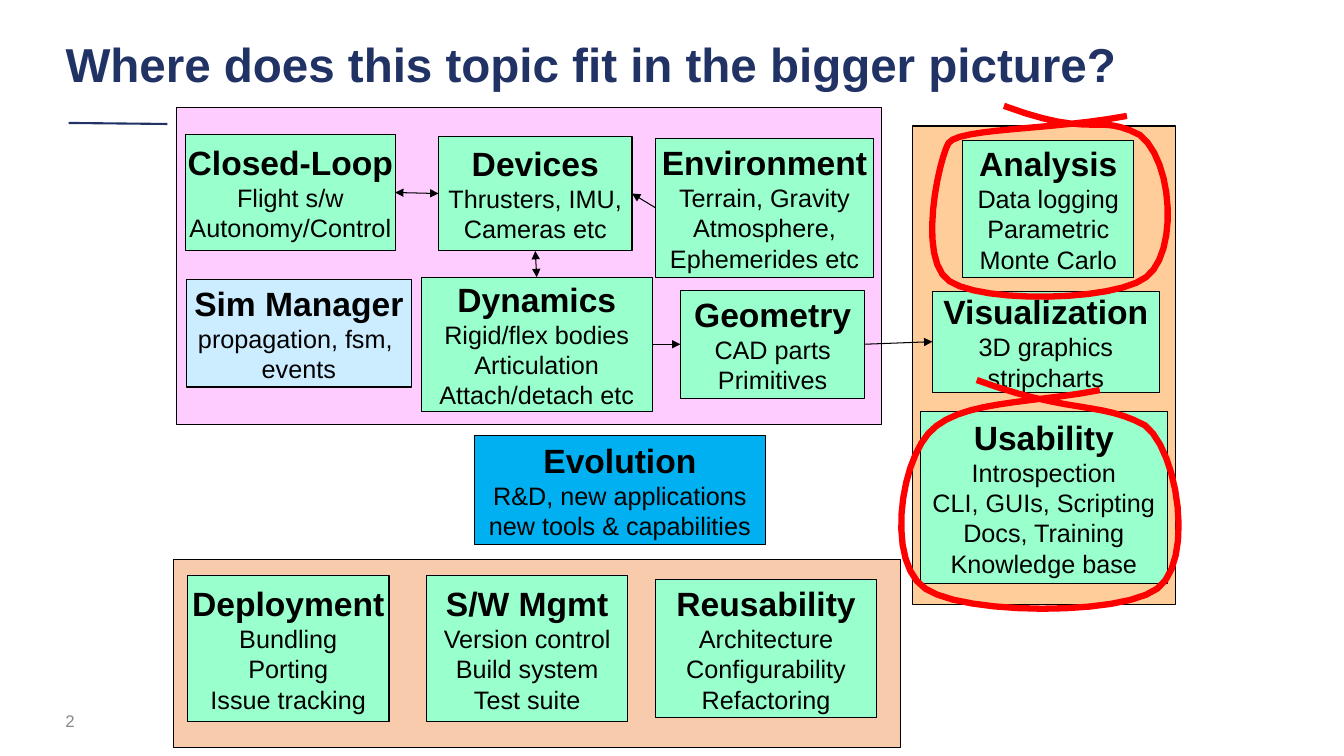
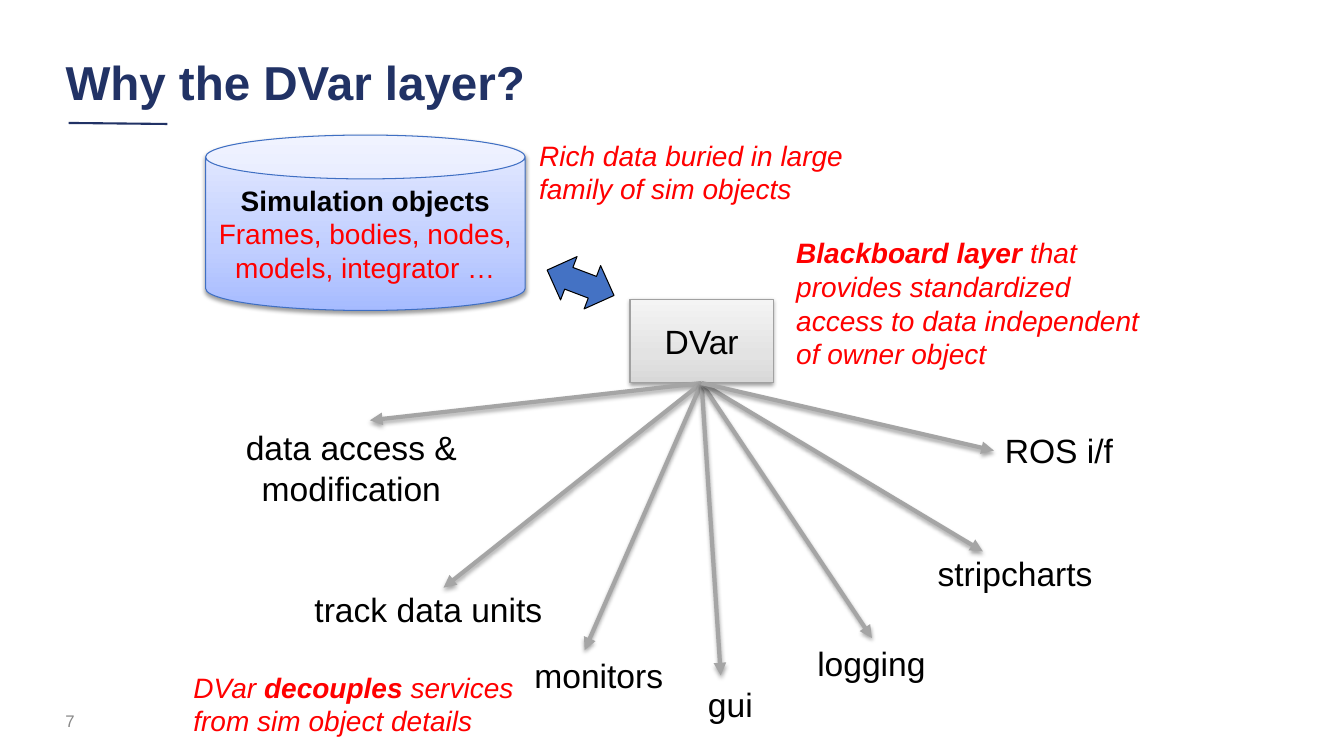
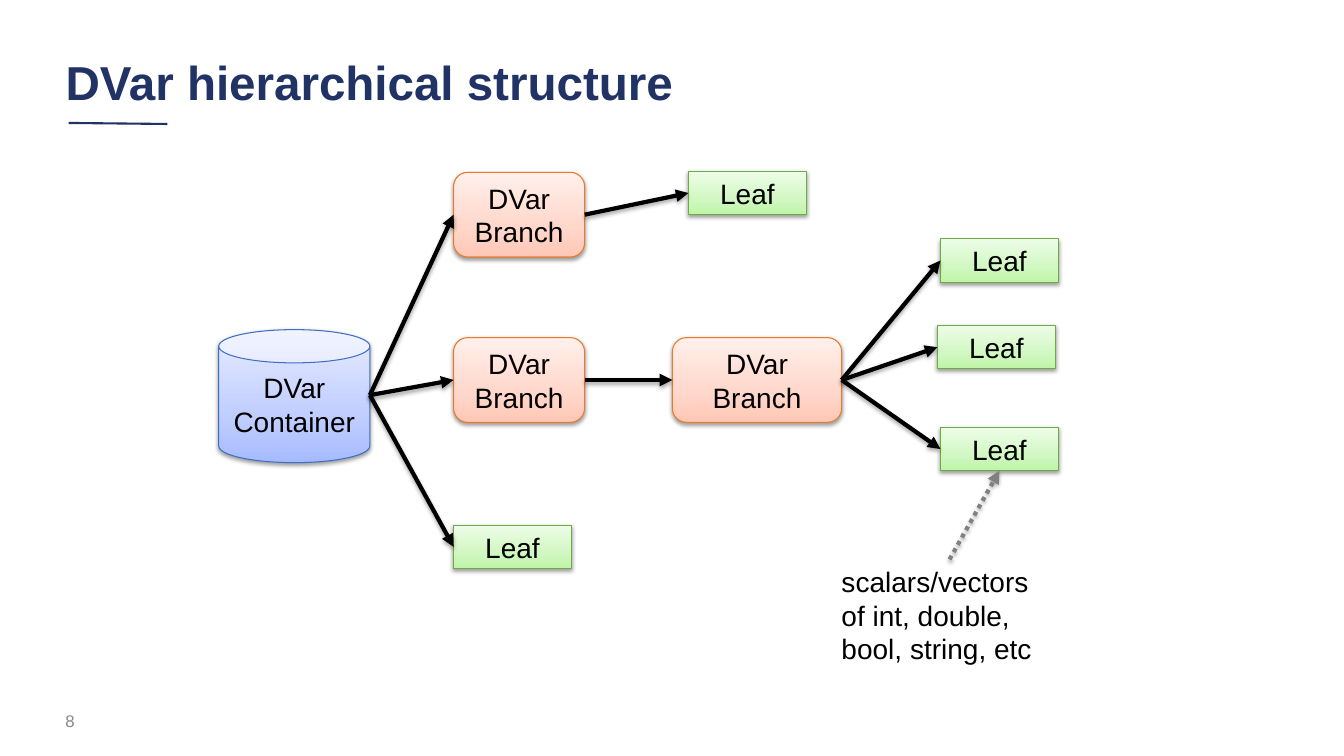
from pptx import Presentation
from pptx.dml.color import RGBColor
from pptx.enum.dml import MSO_LINE
from pptx.enum.shapes import MSO_CONNECTOR as CONN, MSO_SHAPE as SHAPE
from pptx.enum.text import MSO_ANCHOR as ANCHOR, MSO_AUTO_SIZE as FIT, PP_ALIGN as ALIGN
from pptx.oxml.ns import qn
from pptx.util import Inches, Pt
from lxml.etree import SubElement

COLS, ROWS = 133.33, 75
CELL = Inches(0.1)
TOP, LEFT, BOTTOM, RIGHT = range(4)
NAVY, BLACK, GRAY, RED = "213265", "000000", "888888", "FF0000"
MINT, PINK, PEACH, SAND = "99FFCC", "FFCCFF", "F8CBAD", "FFCD9A"
ICE, SKY, BLUE, SILVER = "CCECFF", "00B0F0", "4472C4", "A5A5A5"

STYLES = {
    "title": (34, NAVY, True, False),
    "page": (12, GRAY, False, False),
    "head": (24, BLACK, True, False),
    "detail": (18, BLACK, False, False),
    "label": (24, BLACK, False, False),
    "node": (20, BLACK, False, False),
    "node bold": (20, BLACK, True, False),
    "node red": (20, RED, False, False),
    "note": (20, RED, False, True),
    "note bold": (20, RED, True, True),
}
TINTS = {
    "gray": (("D8D8D8", "E3E3E3", "F4F4F4"), "A1A1A1"),
    "blue": (("A6BBFF", "C0CEFF", "E7ECFF"), "3F6FC3"),
    "orange": (("FFC7B6", "FFD7CB", "FFF0EB"), "EC792B"),
    "green": (("BEF5A7", "D1F7C2", "EDFDE7"), "6DAC43"),
}


def rgb(value):
    return RGBColor.from_string(value)


def grid(*cells):
    return [int(c * CELL) for c in cells]


def add(parent, tag, **attrs):
    return SubElement(parent, qn(tag), {k: str(v) for k, v in attrs.items()})


class Deck:
    def __init__(self):
        self.prs = Presentation()
        self.prs.slide_width, self.prs.slide_height = grid(COLS, ROWS)
        self.layout = self.prs.slide_layouts[5]
        self.s = None

    def slide(self, title, page, top=4.6):
        first = self.s is None
        self.s = self.prs.slides.add_slide(self.layout)
        if first:
            rule = self.line((6.8, 12.2), (16.6, 12.3), NAVY, 1.5)
            self.layout.shapes._spTree.append(rule._element)
        sp = self.s.shapes.title
        sp.left, sp.top, sp.width, sp.height = grid(5.5, top, 111.2, 7.6)
        self.add_runs(sp.text_frame, [[(title, "title")]], ALIGN.LEFT)
        sp.text_frame.vertical_anchor = ANCHOR.MIDDLE
        sp.text_frame.paragraphs[0].line_spacing = 0.9
        number = self.text((5.5, 69.5, 30, 4), [(page, "page")], fit=FIT.NONE)
        number.text_frame.vertical_anchor = ANCHOR.MIDDLE

    def add_runs(self, tf, paras, align):
        for i, runs in enumerate(paras):
            p = tf.add_paragraph() if i else tf.paragraphs[0]
            p.alignment = align
            for text, style in runs:
                r = p.add_run()
                r.text = text
                size, color, r.font.bold, r.font.italic = STYLES[style]
                r.font.name, r.font.size = "Arial", Pt(size)
                r.font.color.rgb = rgb(color)

    def text(self, at, runs, align=ALIGN.LEFT, fit=FIT.SHAPE_TO_FIT_TEXT):
        sp = self.s.shapes.add_textbox(*grid(*at))
        sp.text_frame.word_wrap = True
        sp.text_frame.auto_size = fit
        self.add_runs(sp.text_frame, [runs], align)
        return sp

    def label(self, at, text):
        return self.text(at, [(text, "label")], ALIGN.CENTER)

    def shape(self, at, fill, paras=(), kind=SHAPE.RECTANGLE, wrap=False):
        sp = self.s.shapes.add_shape(kind, *grid(*at))
        sp.shadow.inherit = False
        outline = BLACK
        if fill in TINTS:
            stops, outline = TINTS[fill]
            self.blend(sp, stops)
            self.shade(sp._element.spPr.find(qn("a:effectLst")), 38, 1.6)
        else:
            sp.fill.solid()
            sp.fill.fore_color.rgb = rgb(fill)
        sp.line.color.rgb = rgb(outline)
        sp.line.width = Pt(0.75)
        sp.text_frame.word_wrap = wrap
        sp.text_frame.vertical_anchor = ANCHOR.MIDDLE
        self.add_runs(sp.text_frame, paras, ALIGN.CENTER)
        return sp

    def topic(self, at, head, *details, fill=MINT):
        return self.shape(at, fill, [[(head, "head")]] + [[(d, "detail")] for d in details])

    def node(self, at, text, tint, kind):
        return self.shape(at, tint, [[(text, "node")]], kind, wrap=True)

    def leaf(self, x, y):
        return self.shape((x, y, 11.7, 4.3), "green", [[("Leaf", "node")]])

    def blend(self, sp, stops):
        sp.fill.gradient()
        sp.fill.gradient_angle = 90
        gs_list = sp._element.spPr.find(qn("a:gradFill")).find(qn("a:gsLst"))
        for gs in list(gs_list):
            gs_list.remove(gs)
        for pos, color in zip((0, 35, 100), stops):
            add(add(gs_list, "a:gs", pos=pos * 1000), "a:srgbClr", val=color)

    def shade(self, effects, alpha, dist):
        shadow = add(effects, "a:outerShdw", blurRad=Pt(3.1), dist=Pt(dist),
                     dir=5400000, rotWithShape=0)
        add(add(shadow, "a:srgbClr", val=BLACK), "a:alpha", val=alpha * 1000)

    def line(self, start, end, color=BLACK, width=0.75, heads=(), dash=None, shadow=False):
        points = [grid(*e) if isinstance(e[0], (int, float)) else (0, 0) for e in (start, end)]
        c = self.s.shapes.add_connector(CONN.STRAIGHT, *points[0], *points[1])
        for e, connect in ((start, c.begin_connect), (end, c.end_connect)):
            if not isinstance(e[0], (int, float)):
                connect(*e)
        c.line.color.rgb = rgb(color)
        c.line.width = Pt(width)
        if dash:
            c.line.dash_style = dash
        spPr = c._element.spPr
        for head in heads:
            add(spPr.find(qn("a:ln")), head, type="triangle")
        effects = add(spPr, "a:effectLst")
        if shadow:
            self.shade(effects, 35, 1.8)
        return c

    def link(self, start, end, both=False):
        return self.line(start, end, heads=("a:headEnd", "a:tailEnd") if both else ("a:tailEnd",))

    def arrow(self, start, end, color=BLACK, dash=None):
        return self.line(start, end, color, 3, ("a:tailEnd",), dash, True)

    def scribble(self, start, *curves, steps=12):
        points, last = [], start
        for x1, y1, x2, y2, x3, y3 in curves:
            for t in (i / steps for i in range(1, steps + 1)):
                u = 1 - t
                weights = u ** 3, 3 * u * u * t, 3 * u * t * t, t ** 3
                points.append(grid(*(sum(w * v for w, v in zip(weights, axis))
                                     for axis in ((last[0], x1, x2, x3), (last[1], y1, y2, y3)))))
            last = x3, y3
        builder = self.s.shapes.build_freeform(*grid(*start))
        builder.add_line_segments(points, close=False)
        sp = builder.convert_to_shape()
        sp.shadow.inherit = False
        sp.fill.background()
        sp.line.color.rgb = rgb(RED)
        sp.line.width = Pt(4.5)


def bigger_picture(d):
    d.slide("Where does this topic fit in the bigger picture?", "2", top=2.9)
    for at, fill in (((90.5, 12.5, 26.1, 47.5), SAND),
                     ((17.2, 55.5, 72.1, 18.7), PEACH),
                     ((17.5, 10.7, 70, 31.4), PINK)):
        d.shape(at, fill)
    dynamics = d.topic((41.8, 27.5, 22.9, 13.3), "Dynamics",
                       "Rigid/flex bodies", "Articulation", "Attach/detach etc")
    devices = d.topic((43.5, 13.5, 19.2, 11.4), "Devices", "Thrusters, IMU,", "Cameras etc")
    environment = d.topic((65, 13.7, 21.7, 13.8), "Environment",
                          "Terrain, Gravity", "Atmosphere,", "Ephemerides etc")
    geometry = d.topic((67.5, 28.8, 18.3, 10.7), "Geometry", "CAD parts", "Primitives")
    visualization = d.topic((92.5, 28.9, 22.5, 10), "Visualization", "3D graphics", "stripcharts")
    d.topic((95.5, 13.9, 17, 13.6), "Analysis", "Data logging", "Parametric", "Monte Carlo")
    closed_loop = d.topic((18.4, 13.3, 20.8, 11.6), "Closed-Loop", "Flight s/w", "Autonomy/Control")
    d.topic((91.3, 40.8, 24.5, 17.1), "Usability",
            "Introspection", "CLI, GUIs, Scripting", "Docs, Training", "Knowledge base")
    d.topic((42.3, 57.1, 20, 14.5), "S/W Mgmt", "Version control", "Build system", "Test suite")
    d.topic((65, 57.5, 22, 13.7), "Reusability", "Architecture", "Configurability", "Refactoring")
    d.topic((18.6, 57.1, 20, 14.5), "Deployment", "Bundling", "Porting", "Issue tracking")
    d.topic((47.1, 43.2, 28.8, 10.8), "Evolution",
            "R&D, new applications", "new tools & capabilities", fill=SKY)
    d.topic((18.5, 27.7, 22.3, 10.7), "Sim Manager", "propagation, fsm, ", "events", fill=ICE)
    d.link((dynamics, TOP), (devices, BOTTOM), both=True)
    d.link((devices, LEFT), (closed_loop, RIGHT), both=True)
    d.link((environment, LEFT), (devices, RIGHT))
    d.link((dynamics, RIGHT), (geometry, LEFT))
    d.link((geometry, RIGHT), (visualization, LEFT))
    d.scribble((111.8, 11.5),
               (104.5, 12.9, 95, 12.7, 94.1, 14.2), (93.2, 15.7, 90.9, 25.7, 94.2, 27.9),
               (97.5, 30.1, 110.6, 29.9, 113.7, 27.5), (116.9, 25.1, 116.4, 16, 113.1, 13.4),
               (108.7, 11.1, 108.7, 13.9, 99.6, 10.5))
    d.scribble((109.1, 38.7),
               (101.9, 40.1, 95, 39.7, 92.1, 43), (89.2, 46.3, 88, 55.9, 91.8, 58.4),
               (95.6, 61, 111.2, 61.1, 114.8, 58.4), (118.5, 55.7, 116.9, 44.8, 113.6, 42.2),
               (109.2, 39.8, 106.1, 41.1, 96.9, 37.7))


def dvar_layer(d):
    d.slide("Why the DVar layer?", "7")
    dvar = d.shape((62.5, 29.7, 14.2, 8.3), "gray", [[("DVar", "label")]])
    for text, at, tip in (
            ("data access & modification", (21.4, 41.9, 26.9, 9.1), (36.7, 41.7)),
            ("track data units", (30.1, 57.9, 24.8, 5), (44, 58.3)),
            ("monitors", (50.8, 64.5, 17.2, 5), (58, 64.5)),
            ("gui", (69.2, 67.4, 6.5, 5), (71.5, 67)),
            ("logging", (80, 63.3, 12.9, 5), (86.5, 63.3)),
            ("stripcharts", (91.9, 54.4, 17.6, 5), (97.5, 54.7)),
            ("ROS i/f", (98.6, 42.2, 12.9, 5), (98.6, 44.7))):
        d.label(at, text)
        d.arrow((dvar, BOTTOM), tip, SILVER)
    d.shape((20.4, 13.4, 31.7, 17.4), "blue",
            [[("Simulation objects", "node bold")],
             [("Frames, bodies, nodes, models, integrator …", "node red")]],
            SHAPE.CAN, wrap=True)
    d.shape((55.3, 24.5, 4.6, 7.1), BLUE, kind=SHAPE.UP_DOWN_ARROW).rotation = 290.8
    d.text((52.5, 13.2, 36.1, 7.7), [("Rich data buried in large family of sim objects", "note")])
    d.text((78, 22.9, 36.1, 14.5),
           [("Blackboard layer ", "note bold"),
            ("that provides standardized access to data independent of owner object", "note")])
    d.text((18.2, 66, 36.1, 7.7),
           [("DVar ", "note"), ("decouples", "note bold"),
            (" services from sim object details", "note")])


def hierarchy(d):
    d.slide("DVar hierarchical structure", "8")
    d.node((21.7, 32.7, 15, 13.2), "DVar Container", "blue", SHAPE.CAN)
    container = (36.7, 39.2)
    upper, middle, inner = [
        d.node((x, y, w, 8.4), "DVar Branch", "orange", SHAPE.ROUNDED_RECTANGLE)
        for x, y, w in ((45, 17.1, 13), (45, 33.5, 13), (66.7, 33.5, 16.8))]
    low_leaf, upper_leaf = d.leaf(45, 52.1), d.leaf(68.3, 17)
    inner_leaves = [d.leaf(x, y) for x, y in ((93.3, 23.7), (93, 32.3), (93.3, 42.4))]
    for child in (upper, middle, low_leaf):
        d.arrow(container, (child, LEFT))
    for parent, child in [(upper, upper_leaf), (middle, inner)] + [(inner, n) for n in inner_leaves]:
        d.arrow((parent, RIGHT), (child, LEFT))
    d.text((82.5, 55.5, 23.3, 11.1),
           [("scalars/vectors of int, double, bool, string, etc", "node")])
    d.arrow((94.2, 55.5), (inner_leaves[-1], BOTTOM), "808080", MSO_LINE.ROUND_DOT)


def main():
    d = Deck()
    for build in (bigger_picture, dvar_layer, hierarchy):
        build(d)
    d.prs.save("out.pptx")


if __name__ == "__main__":
    main()
